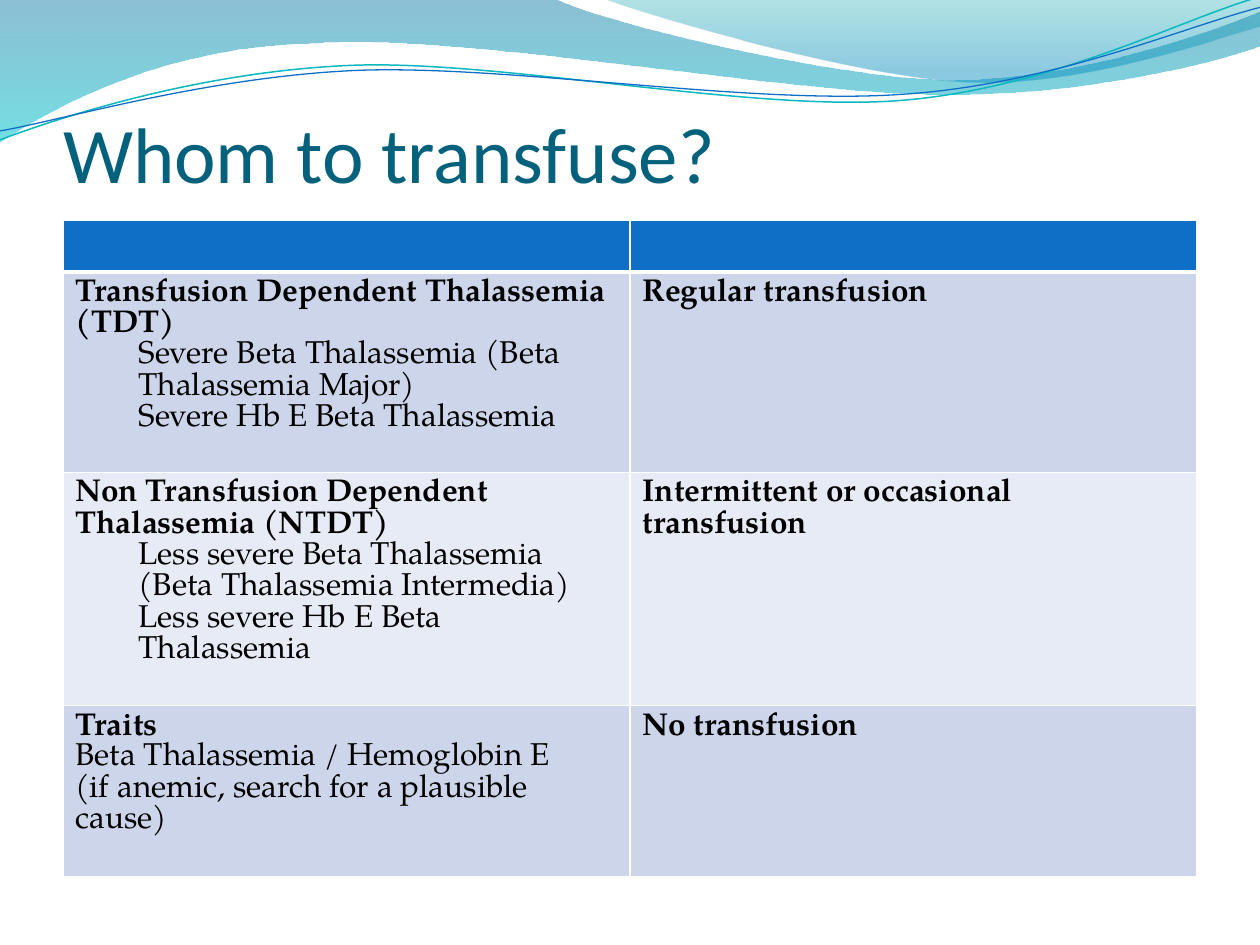
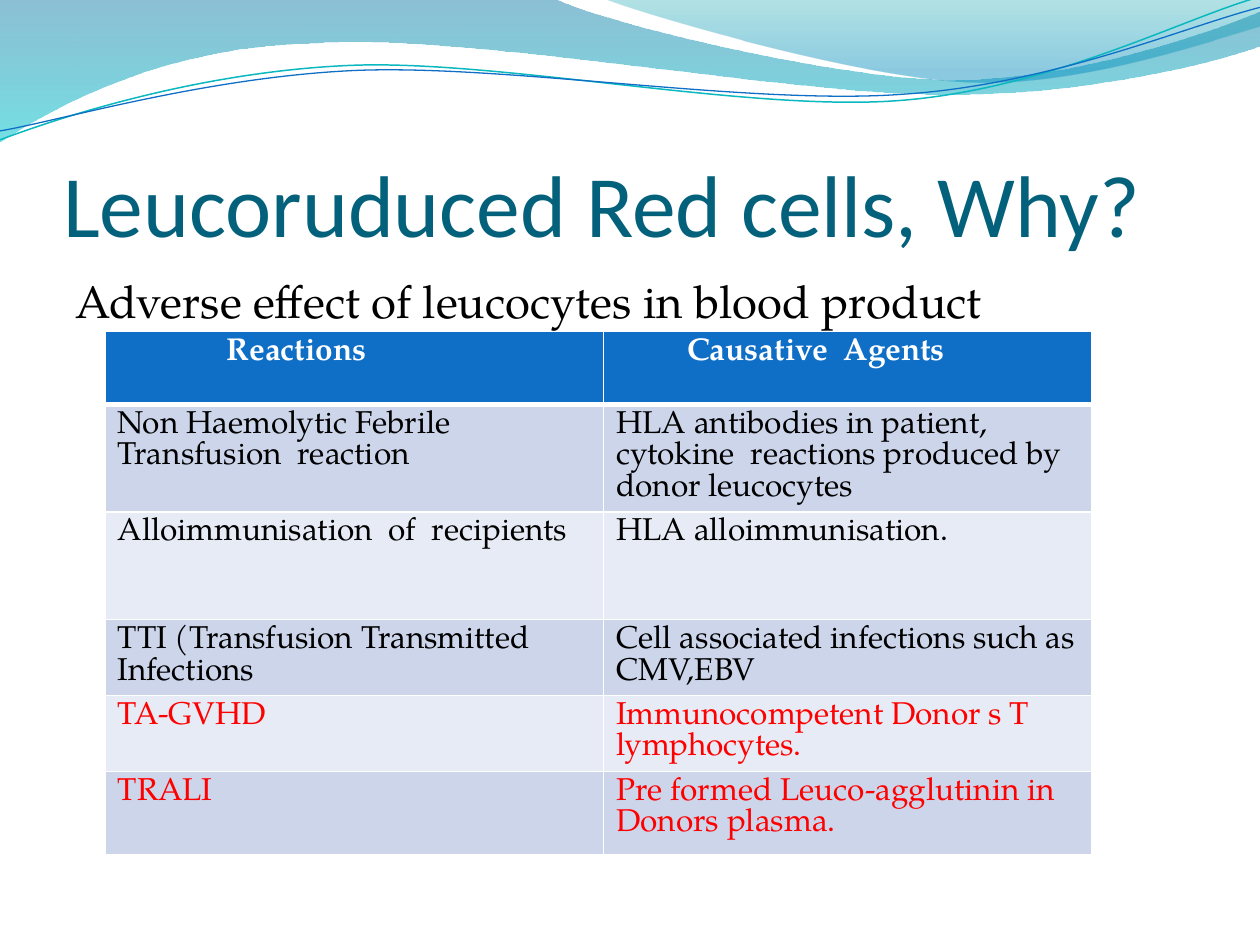
from dataclasses import dataclass

from lxml.etree import SubElement
from pptx import Presentation
from pptx.dml.color import RGBColor
from pptx.enum.text import MSO_ANCHOR, MSO_AUTO_SIZE, PP_ALIGN
from pptx.oxml.ns import qn
from pptx.util import Cm, Pt


@dataclass(frozen=True)
class Theme:
    title_font: str = "Calibri"
    body_font: str = "TeX Gyre Pagella"
    title: str = "04617B"
    text: str = "000000"
    alert: str = "FF0000"
    white: str = "FFFFFF"
    header: str = "0F6FC6"
    bands: tuple = ("E7EBF5", "CCD5EA")
    body_size: int = 26
    cell_size: int = 18
    cell_border: int = 1
    header_border: int = 3


THEME = Theme()


def style_runs(paragraph, font, size, color, bold=False):
    for run in paragraph.runs:
        run.font.name = font
        run.font.size = Pt(size)
        run.font.bold = bold
        run.font.color.rgb = RGBColor.from_string(color)


def add_banded_table(slide, left, top, widths, heights, rows):
    """Each cell is a list of paragraphs: (text, bold, colour, indent in cm)."""
    table = slide.shapes.add_table(
        len(heights), len(widths), Cm(left), Cm(top), Cm(sum(widths)), Cm(sum(heights))
    ).table
    table.horz_banding = False
    for column, width in zip(table.columns, widths):
        column.width = Cm(width)
    for row_index, (row, height) in enumerate(zip(rows, heights)):
        table.rows[row_index].height = Cm(height)
        for column_index, lines in enumerate(row):
            cell = table.cell(row_index, column_index)
            properties = cell._tc.get_or_add_tcPr()
            for side in ("lnL", "lnR", "lnT", "lnB"):
                below_header = (row_index, side) in ((0, "lnB"), (1, "lnT"))
                width = THEME.header_border if below_header else THEME.cell_border
                border = SubElement(properties, qn(f"a:{side}"), w=str(Pt(width)))
                paint = SubElement(border, qn("a:solidFill"))
                SubElement(paint, qn("a:srgbClr"), val=THEME.white)
            cell.fill.solid()
            band = THEME.bands[row_index % 2] if row_index else THEME.header
            cell.fill.fore_color.rgb = RGBColor.from_string(band)

            cell.text_frame.text = "\n".join(line[0] for line in lines)
            for paragraph, (_, bold, color, indent) in zip(cell.text_frame.paragraphs, lines):
                style_runs(paragraph, THEME.body_font, THEME.cell_size, color, bold)
                # Exact spacing keeps rows from growing with the fallback font
                paragraph.line_spacing = Pt(THEME.cell_size)
                if indent:
                    paragraph_properties = paragraph._p.get_or_add_pPr()
                    paragraph_properties.set("marL", str(Cm(indent)))
                    paragraph_properties.set("indent", "0")


presentation = Presentation()
presentation.slide_width = Cm(25.4)
presentation.slide_height = Cm(19.05)
title_only = presentation.slide_layouts[5]

# Slides with their titles: text, height in cm, type size
slides = []
for title_text, title_height, title_size in [
    ("Whom to transfuse?", 2.06, 45),
    ("Leucoruduced Red cells, Why?", 3.18, 50),
]:
    slide = presentation.slides.add_slide(title_only)
    title = slide.shapes.title
    title.left, title.top = Cm(1.27), Cm(1.96)
    title.width, title.height = Cm(22.86), Cm(title_height)
    frame = title.text_frame
    frame.text = title_text
    frame.word_wrap = True
    frame.auto_size = MSO_AUTO_SIZE.NONE
    frame.vertical_anchor = MSO_ANCHOR.BOTTOM
    frame.margin_left = frame.margin_right = frame.margin_bottom = 0
    frame.margin_top = Cm(0.13)
    frame.paragraphs[0].alignment = PP_ALIGN.LEFT
    style_runs(frame.paragraphs[0], THEME.title_font, title_size, THEME.title)
    slides.append(slide)
who_slide, why_slide = slides

# Waves on the master, in cm: two numbers are a line, six are a Bézier curve.
# Gradient stops are (position, colour, opacity %); strokes are (colour, points).
waves = [
    {
        "start": (0, 0),
        "segments": [
            (11.18, -0.03),
            (12.09, 0.43, 16.87, 1.6, 19.25, 1.6),
            (21.67, 1.6, 24.33, 0.66, 25.4, 0.23),
            (25.43, 0.91),
            (24.97, 1.12, 22.1, 1.93, 18.95, 1.9),
            (15.8, 1.9, 9.7, 0.71, 6.53, 0.86),
            (3.28, 0.91, 1.17, 2.11, -0.03, 2.87),
        ],
        "gradient": [(0, "0074A1", 45), (1, "00C6CF", 55)],
    },
    {
        "start": (12.17, -0.03),
        "segments": [
            (12.93, 0.28, 17.32, 1.57, 19.53, 1.65),
            (21.74, 1.75, 24.41, 0.81, 25.4, 0.53),
            (25.4, 0),
        ],
        "gradient": [(0, "00A1A9", 30), (0.8, "008BBF", 45)],
    },
    {
        "start": (0, 2.82),
        "segments": [
            (1.22, 2.36, 4.01, 1.45, 7.04, 1.32),
            (10.03, 1.19, 15.06, 2.26, 18.11, 2.03),
            (21.16, 1.8, 23.83, 0.38, 25.35, -0.05),
        ],
        "stroke": ("0AB8BF", 0.85),
    },
    {
        "start": (0, 2.64),
        "segments": [
            (1.19, 2.44, 4.17, 1.55, 7.19, 1.42),
            (10.24, 1.3, 15.16, 2.13, 18.21, 1.9),
            (21.23, 1.7, 23.9, 0.53, 25.4, 0.15),
        ],
        "stroke": ("0F6FC6", 0.75),
    },
]
master_tree = presentation.slide_master.shapes.element
for wave_index, wave in enumerate(waves):
    corners = [
        (Cm(x), Cm(y))
        for segment in wave["segments"]
        for x, y in zip(segment[::2], segment[1::2])
    ]
    start_x, start_y = wave["start"]
    builder = who_slide.shapes.build_freeform(Cm(start_x), Cm(start_y))
    builder.add_line_segments(corners, close="gradient" in wave)
    shape = builder.convert_to_shape()
    shape.shadow.inherit = False

    # Join each three points of a curve into one Bézier segment
    outline = next(shape.element.iter(qn("a:path")))
    points = iter(outline.findall(qn("a:lnTo")))
    for segment in wave["segments"]:
        first = next(points)
        if len(segment) == 6:
            first.tag = qn("a:cubicBezTo")
            for point in (next(points), next(points)):
                first.append(point[0])
                outline.remove(point)

    if "gradient" in wave:
        shape.line.fill.background()
        shape.fill.gradient()
        shape.fill.gradient_angle = 270
        for stop, (position, color, _) in zip(shape.fill.gradient_stops, wave["gradient"]):
            stop.position = position
            stop.color.rgb = RGBColor.from_string(color)
        stop_colors = shape.element.spPr.iter(qn("a:srgbClr"))
        for stop_color, (_, _, opacity) in zip(stop_colors, wave["gradient"]):
            SubElement(stop_color, qn("a:alpha"), val=str(opacity * 1000))
    else:
        color, width = wave["stroke"]
        shape.fill.background()
        shape.line.color.rgb = RGBColor.from_string(color)
        shape.line.width = Pt(width)
    shape.element.nvSpPr.cNvPr.id = 101 + wave_index
    master_tree.insert(2 + wave_index, shape.element)

# Slide 1: groups of patients and their transfusion need
groups = [
    (
        [("Transfusion Dependent Thalassemia (TDT)", True, 0),
         ("Severe Beta Thalassemia (Beta Thalassemia Major)", False, 1.27),
         ("Severe Hb E Beta Thalassemia", False, 1.27)],
        "Regular transfusion",
    ),
    (
        [("Non Transfusion Dependent Thalassemia (NTDT)", True, 0),
         ("Less severe Beta Thalassemia (Beta Thalassemia Intermedia)", False, 1.27),
         ("Less severe Hb E Beta Thalassemia", False, 1.27)],
        "Intermittent or occasional transfusion",
    ),
    (
        [("Traits", True, 0),
         ("Beta Thalassemia / Hemoglobin E", False, 0),
         ("(if anemic, search for a plausible cause)", False, 0)],
        "No transfusion",
    ),
]
group_rows = [[[], []]]
for lines, need in groups:
    group_lines = [(text, bold, THEME.text, indent) for text, bold, indent in lines]
    group_rows.append([group_lines, [(need, True, THEME.text, 0)]])
add_banded_table(who_slide, 1.27, 4.45, [11.43, 11.43], [1.03, 4.04, 4.7, 3.45], group_rows)

# Slide 2: reactions and their causes
subtitle = why_slide.shapes.add_textbox(Cm(1.27), Cm(5.38), Cm(22.86), Cm(12.19))
subtitle.text_frame.word_wrap = True
subtitle.text_frame.text = "Adverse effect of leucocytes in blood product"
subtitle_paragraph = subtitle.text_frame.paragraphs[0]
subtitle_paragraph.space_before = Pt(0.2 * THEME.body_size)
style_runs(subtitle_paragraph, THEME.body_font, THEME.body_size, THEME.text)

reactions = [
    ("Non Haemolytic Febrile Transfusion  reaction",
     "HLA antibodies in patient, cytokine  reactions produced by donor leucocytes", THEME.text),
    ("Alloimmunisation  of  recipients", "HLA alloimmunisation.", THEME.text),
    ("TTI (Transfusion Transmitted Infections",
     "Cell associated infections such as CMV,EBV", THEME.text),
    ("TA-GVHD", "Immunocompetent Donor s T lymphocytes.", THEME.alert),
    ("TRALI", "Pre formed Leuco-agglutinin in Donors plasma.", THEME.alert),
]
reaction_rows = [
    [[("Reactions", True, THEME.white, 2.2)], [("Causative  Agents", True, THEME.white, 1.43)]]
]
for reaction, agent, color in reactions:
    reaction_rows.append([[(text, False, color, 0)] for text in (reaction, agent)])
add_banded_table(
    why_slide, 2.12, 6.68, [10.05, 9.84], [1.47, 2.17, 2.17, 1.53, 1.53, 1.68], reaction_rows
)

presentation.save("out.pptx")
